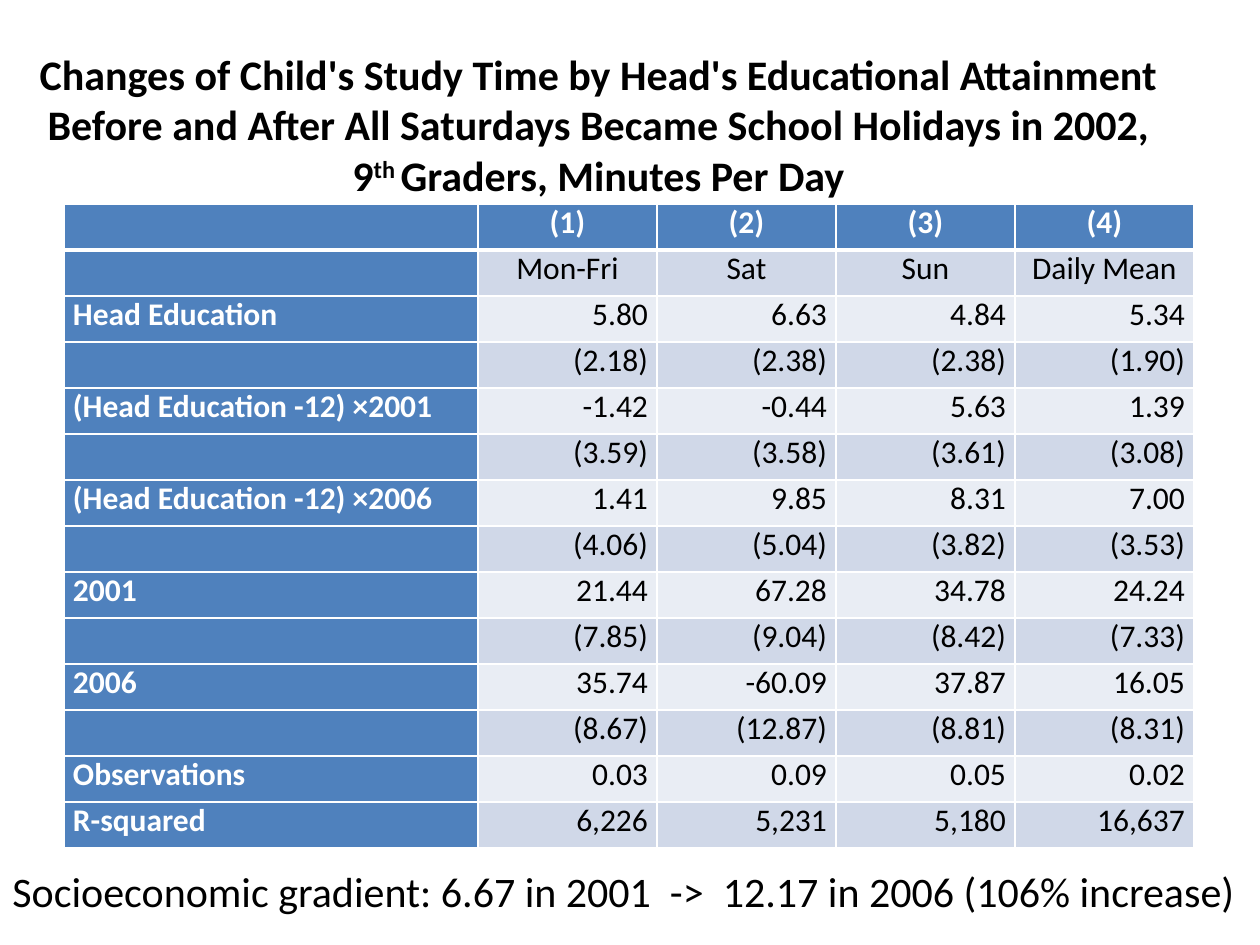
from lxml.etree import SubElement
from pptx import Presentation
from pptx.dml.color import RGBColor
from pptx.enum.text import MSO_ANCHOR, MSO_AUTO_SIZE, PP_ALIGN
from pptx.oxml.ns import qn
from pptx.util import Pt

SCALE = 914400 / 126  # EMU per px
BLUE, DARK, LIGHT = "4F81BD", "D0D8E8", "E9EDF4"
WHITE, BLACK = "FFFFFF", "000000"
WIDTHS = [414, 179, 179, 179, 179]
ROWS = [
    ["", "(1)", "(2)", "(3)", "(4)"],
    ["", "Mon-Fri", "Sat", "Sun", "Daily Mean"],
    ["Head Education", "5.80", "6.63", "4.84", "5.34"],
    ["", "(2.18)", "(2.38)", "(2.38)", "(1.90)"],
    ["(Head Education -12) ×2001", "-1.42", "-0.44", "5.63", "1.39"],
    ["", "(3.59)", "(3.58)", "(3.61)", "(3.08)"],
    ["(Head Education -12) ×2006", "1.41", "9.85", "8.31", "7.00"],
    ["", "(4.06)", "(5.04)", "(3.82)", "(3.53)"],
    ["2001", "21.44", "67.28", "34.78", "24.24"],
    ["", "(7.85)", "(9.04)", "(8.42)", "(7.33)"],
    ["2006", "35.74", "-60.09", "37.87", "16.05"],
    ["", "(8.67)", "(12.87)", "(8.81)", "(8.31)"],
    ["Observations", "0.03", "0.09", "0.05", "0.02"],
    ["R-squared", "6,226", "5,231", "5,180", "16,637"],
]


def px(n):
    return round(n * SCALE)


def paint(target, color):
    target.rgb = RGBColor.from_string(color)


def style(para, size, color, bold, align):
    para.alignment = align
    font = para.font
    font.name, font.size, font.bold = "Calibri", Pt(size), bold
    paint(font.color, color)


def add_title(slide):
    title = slide.shapes.title
    title.left, title.top = px(0), px(45)
    title.width, title.height = px(1197), px(158)
    frame = title.text_frame
    frame.word_wrap = True
    frame.auto_size = MSO_AUTO_SIZE.NONE
    frame.vertical_anchor = MSO_ANCHOR.MIDDLE
    para = frame.paragraphs[0]
    para.text = (
        "Changes of Child's Study Time by Head's Educational Attainment "
        "Before and After All Saturdays Became School Holidays in 2002,\v9"
    )
    # Raised ordinal ending
    power = para.add_run()
    power.text = "th "
    power.font._element.set("baseline", "30000")
    para.add_run().text = "Graders, Minutes Per Day"
    style(para, 24, BLACK, True, PP_ALIGN.CENTER)


def add_edges(cell, top, base):
    props = cell._tc.get_or_add_tcPr()
    for side, width in zip("LRTB", (1, 1, top, base)):
        line = SubElement(props, qn(f"a:ln{side}"), w=str(Pt(width)))
        fill = SubElement(line, qn("a:solidFill"))
        SubElement(fill, qn("a:srgbClr"), val=WHITE)


def fill_cell(cell, text, row, col):
    head = row == 0 or col == 0
    cell.margin_left = cell.margin_right = px(9)
    cell.margin_top = cell.margin_bottom = 0
    add_edges(cell, 3 if row == 1 else 1, 3 if row == 0 else 1)
    cell.fill.solid()
    paint(cell.fill.fore_color, BLUE if head else DARK if row % 2 else LIGHT)
    if col == 0:
        align = PP_ALIGN.JUSTIFY
    else:
        align = PP_ALIGN.CENTER if row < 2 else PP_ALIGN.RIGHT
    cell.text = text
    style(cell.text_frame.paragraphs[0], 18, WHITE if head else BLACK, head, align)


def add_grid(slide):
    table = slide.shapes.add_table(
        len(ROWS), len(WIDTHS), px(64), px(204), px(sum(WIDTHS)), px(46 * len(ROWS))
    ).table
    for col, width in zip(table.columns, WIDTHS):
        col.width = px(width)
    for r, texts in enumerate(ROWS):
        table.rows[r].height = px(46)
        for c, text in enumerate(texts):
            fill_cell(table.cell(r, c), text, r, c)


def add_note(slide):
    frame = slide.shapes.add_textbox(px(0), px(859), px(1266), px(63)).text_frame
    frame.word_wrap = False
    frame.auto_size = MSO_AUTO_SIZE.SHAPE_TO_FIT_TEXT
    para = frame.paragraphs[0]
    para.text = "Socioeconomic gradient: 6.67 in 2001  ->  12.17 in 2006 (106% increase)"
    style(para, 24, BLACK, False, PP_ALIGN.LEFT)


def main():
    deck = Presentation()
    deck.slide_width, deck.slide_height = px(1260), px(945)
    slide = deck.slides.add_slide(deck.slide_layouts[5])  # title only
    add_title(slide)
    add_grid(slide)
    add_note(slide)
    deck.save("out.pptx")


if __name__ == "__main__":
    main()
